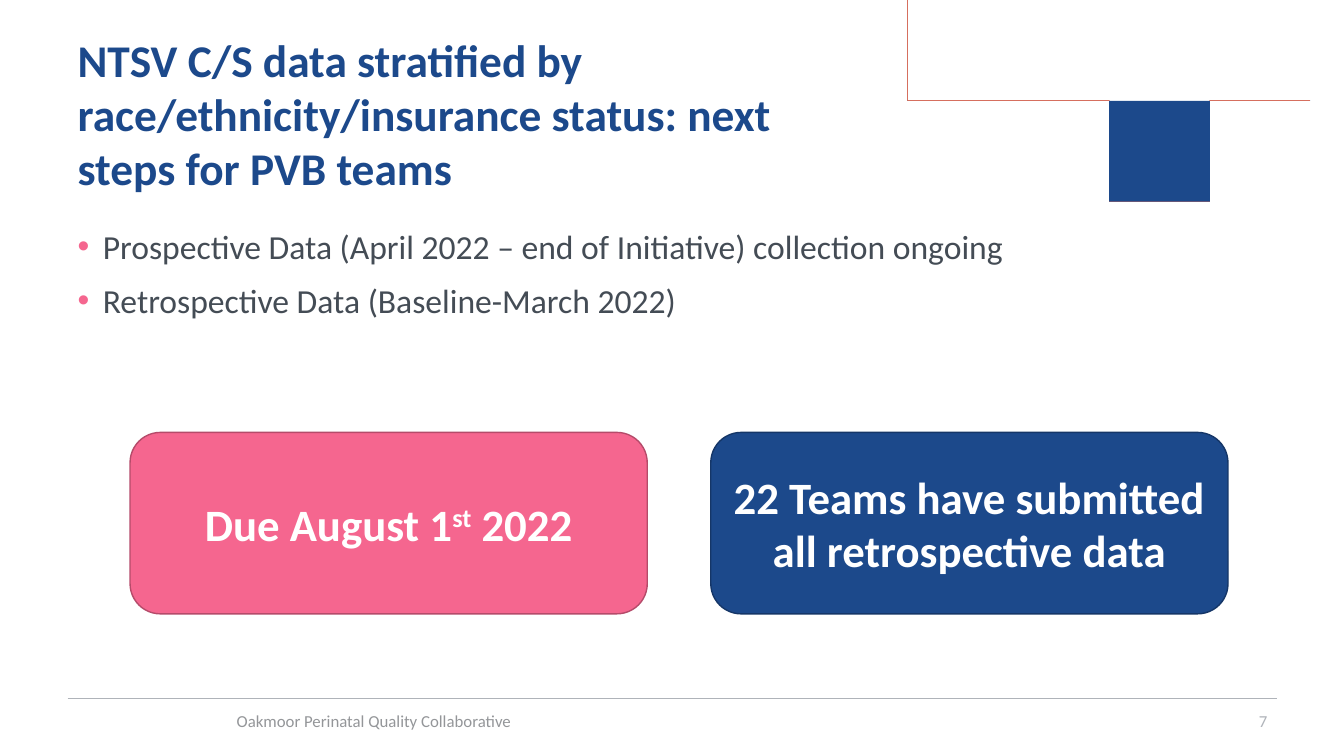
from lxml import etree
from pptx import Presentation
from pptx.dml.color import RGBColor
from pptx.enum.shapes import MSO_CONNECTOR, MSO_SHAPE
from pptx.enum.text import MSO_ANCHOR, MSO_AUTO_SIZE, PP_ALIGN
from pptx.oxml.ns import qn
from pptx.util import Inches, Pt

STRAIGHT = MSO_CONNECTOR.STRAIGHT
ROUNDED = MSO_SHAPE.ROUNDED_RECTANGLE
MIDDLE, TOP = MSO_ANCHOR.MIDDLE, MSO_ANCHOR.TOP
NO_FIT = MSO_AUTO_SIZE.NONE
LEFT, CENTER, RIGHT = PP_ALIGN.LEFT, PP_ALIGN.CENTER, PP_ALIGN.RIGHT

NAVY = RGBColor(0x1C, 0x49, 0x8B)
NAVY_EDGE = RGBColor(0x15, 0x36, 0x67)
PINK = RGBColor(0xF5, 0x66, 0x8F)
PINK_EDGE = RGBColor(0xB5, 0x4B, 0x6A)
ORANGE = RGBColor(0xF0, 0x41, 0x15)
CORAL = RGBColor(0xF5, 0x83, 0x66)
SLATE = RGBColor(0x44, 0x4C, 0x55)
SILVER = RGBColor(0xAF, 0xB3, 0xB9)
GRAY = RGBColor(0x94, 0x96, 0x99)
WHITE = RGBColor(0xFF, 0xFF, 0xFF)

FONT = "Calibri"
MARGIN = 0.67
STEPS = 10

# Upper edge runs left to right, lower edge right to left.
ORANGE_TOP = [(8.05, 0), (8.82, 0.54), (9.58, 0.99), (10.39, 1.33),
              (10.81, 1.44), (11.25, 1.5), (11.68, 1.52), (12.12, 1.49),
              (12.56, 1.43), (12.99, 1.32), (13.33, 1.2)]
ORANGE_LOW = [(13.33, 1.21), (12.99, 1.33), (12.56, 1.45), (12.13, 1.52),
              (11.69, 1.56), (11.24, 1.55), (10.8, 1.49), (10.37, 1.39),
              (9.55, 1.06), (8.78, 0.62), (7.86, 0)]
NAVY_TOP = [(8.27, 0), (8.79, 0.38), (9.54, 0.86), (10.34, 1.23),
            (11.2, 1.43), (12.09, 1.45), (12.64, 1.38), (12.97, 1.3),
            (13.33, 1.19)]
NAVY_LOW = [(13.33, 1.2), (12.97, 1.32), (12.53, 1.43), (12.09, 1.49),
            (11.64, 1.52), (11.19, 1.5), (10.31, 1.31), (9.48, 0.96),
            (8.71, 0.49), (8.02, 0)]


def smooth(knots):
    """Return points along a Catmull-Rom curve through the knots."""
    ends = [knots[0], *knots, knots[-1]]
    points = [knots[0]]
    for a, b, c, d in zip(ends, ends[1:], ends[2:], ends[3:]):
        for step in range(1, STEPS + 1):
            t = step / STEPS
            points.append(tuple(
                q + t / 2 * (r - p + t * (2 * p - 5 * q + 4 * r - s
                                          + t * (3 * (q - r) + s - p)))
                for p, q, r, s in zip(a, b, c, d)))
    return points


def add_swoosh(slide, upper, lower):
    points = smooth(upper) + smooth(lower)
    form = slide.shapes.build_freeform(*points[0], scale=Inches(1))
    form.add_line_segments(points[1:], close=True)
    shape = form.convert_to_shape()
    shape.shadow.inherit = False
    shape.line.fill.background()
    return shape


def add_rule(slide, top):
    rule = slide.shapes.add_connector(
        STRAIGHT, Inches(MARGIN), Inches(top), Inches(12.67), Inches(top))
    rule.line.color.rgb = SILVER
    rule.line.width = Pt(0.5)
    etree.SubElement(rule._element.spPr, qn("a:effectLst"))


def place(shape, left, top, width, height):
    shape.left, shape.top = Inches(left), Inches(top)
    shape.width, shape.height = Inches(width), Inches(height)


def set_frame(shape, anchor):
    frame = shape.text_frame
    frame.word_wrap = True
    frame.auto_size = NO_FIT
    frame.vertical_anchor = anchor
    return frame


def style(para, size, color, align, bold=False):
    para.alignment = align
    font = para.font
    font.name, font.size, font.bold = FONT, Pt(size), bold
    font.color.rgb = color


def fill_title(title, text):
    place(title, MARGIN, 0.4, 7.45, 1.45)
    frame = set_frame(title, MIDDLE)
    frame.text = text
    style(frame.paragraphs[0], 32.4, NAVY, LEFT, True)


def set_bullet(para):
    props = para._p.get_or_add_pPr()
    props.set("marL", str(Inches(0.25)))
    props.set("indent", str(-Inches(0.25)))
    tint = etree.SubElement(props, qn("a:buClr"))
    etree.SubElement(tint, qn("a:srgbClr"), val=str(PINK))
    etree.SubElement(props, qn("a:buFont"), typeface="Arial")
    etree.SubElement(props, qn("a:buChar"), char="•")


def fill_list(body, items):
    place(body, MARGIN, 2.19, 12, 4.76)
    frame = set_frame(body, TOP)
    frame.text = "\n".join(items)
    for para in frame.paragraphs:
        style(para, 24, SLATE, LEFT)
        para.space_before = Pt(10)
        set_bullet(para)


def add_footer(slide, left, width, text, color):
    box = slide.shapes.add_textbox(
        Inches(left), Inches(6.95), Inches(width), Inches(0.4))
    frame = set_frame(box, MIDDLE)
    frame.text = text
    para = frame.paragraphs[0]
    style(para, 12, color, RIGHT)
    para.space_after = Pt(6)


def add_card(slide, left, fill, edge, parts):
    """Add a rounded card; parts are (text, raised) pairs."""
    card = slide.shapes.add_shape(
        ROUNDED, Inches(left), Inches(4.29), Inches(5.13), Inches(1.8))
    card.shadow.inherit = False
    card.fill.solid()
    card.fill.fore_color.rgb = fill
    card.line.color.rgb = edge
    card.line.width = Pt(1)
    para = set_frame(card, MIDDLE).paragraphs[0]
    style(para, 32, WHITE, CENTER, True)
    for text, raised in parts:
        run = para.add_run()
        run.text = text
        if raised:
            run._r.get_or_add_rPr().set("baseline", "30000")


def main():
    deck = Presentation()
    deck.slide_width, deck.slide_height = Inches(13.33), Inches(7.5)
    slide = deck.slides.add_slide(deck.slide_layouts[1])

    ribbon = add_swoosh(slide, ORANGE_TOP, ORANGE_LOW)
    ribbon.fill.gradient()
    ribbon.fill.gradient_angle = 0
    stops = ribbon.fill.gradient_stops
    for stop, color, spot in zip(stops, (ORANGE, CORAL), (0, 0.2)):
        stop.color.rgb = color
        stop.position = spot
    ribbon = add_swoosh(slide, NAVY_TOP, NAVY_LOW)
    ribbon.fill.solid()
    ribbon.fill.fore_color.rgb = NAVY
    add_rule(slide, 6.93)

    fill_title(slide.shapes.title,
               "NTSV C/S data stratified by race/ethnicity/insurance "
               "status: next steps for PVB teams")
    fill_list(slide.placeholders[1], [
        "Prospective Data (April 2022 – end of Initiative) collection ongoing",
        "Retrospective Data (Baseline-March 2022)"])
    add_footer(slide, 9.67, 3, "7", SILVER)
    add_footer(slide, MARGIN, 4.5, "Oakmoor Perinatal Quality Collaborative",
               GRAY)
    add_card(slide, 7.05, NAVY, NAVY_EDGE,
             [("22 Teams have submitted all retrospective data", False)])
    add_card(slide, 1.29, PINK, PINK_EDGE,
             [("Due August 1", False), ("st", True), (" 2022", False)])
    deck.save("out.pptx")


if __name__ == "__main__":
    main()
